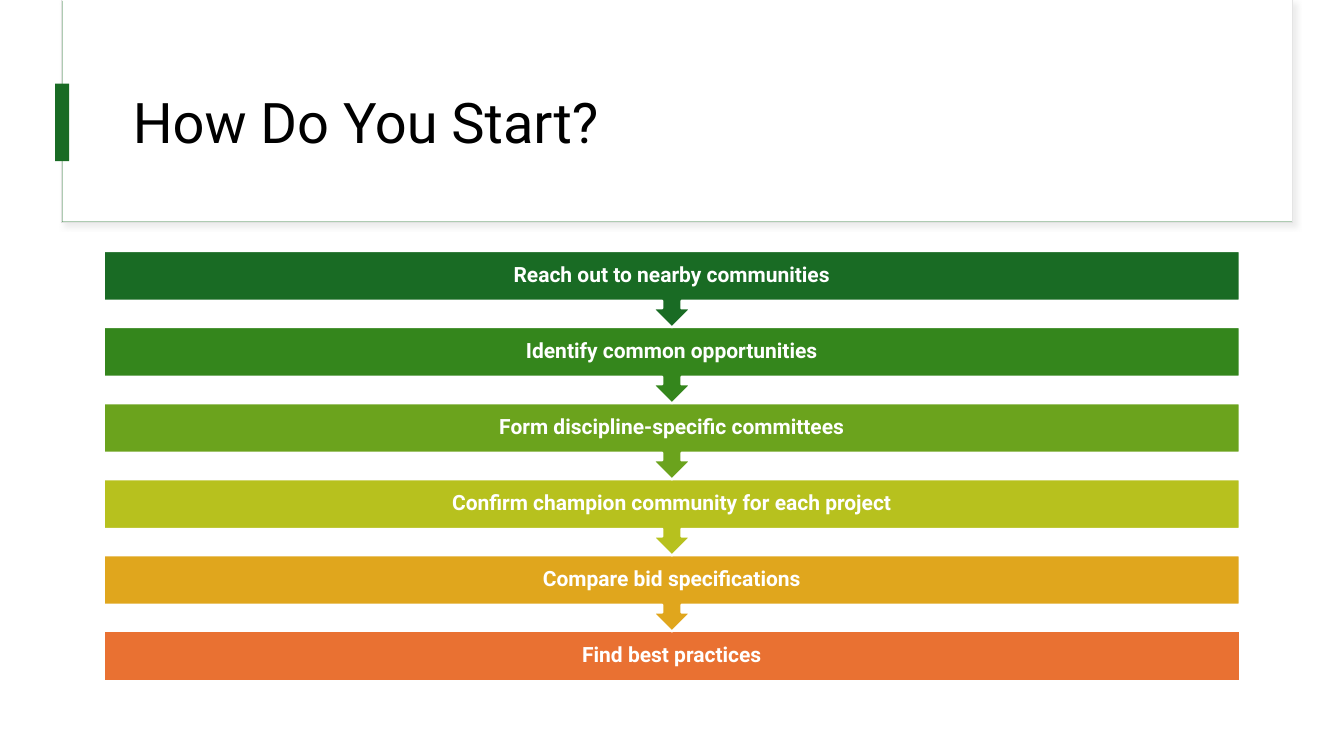
from dataclasses import dataclass

from lxml.etree import SubElement
from pptx import Presentation
from pptx.dml.color import RGBColor
from pptx.enum.shapes import MSO_SHAPE as Kind
from pptx.enum.text import MSO_ANCHOR as Anchor, PP_ALIGN as Align
from pptx.oxml.ns import qn
from pptx.shapes.autoshape import Shape
from pptx.shapes.shapetree import SlideShapes
from pptx.util import Pt

FONT = "Roboto"
GREEN = "196B24"
WHITE = "FFFFFF"
LEFT, TOP, WIDTH = 74.2, 179.4, 811.4
PITCH, TALL, BAR = 54.3, 54.5, 35.4


@dataclass
class Box:
    left: float
    top: float
    width: float
    height: float
    fill: str
    line: str = ""
    weight: float = 0
    kind: Kind = Kind.RECTANGLE


@dataclass
class Step:
    text: str
    fill: str


STEPS = [
    Step("Reach out to nearby communities", GREEN),
    Step("Identify common opportunities", "34861C"),
    Step("Form discipline-specific committees", "6BA31D"),
    Step("Confirm champion community for each project", "B7C11E"),
    Step("Compare bid specifications", "E0A61D"),
    Step("Find best practices", "E97132"),
]


def tint(code: str) -> RGBColor:
    return RGBColor.from_string(code)


def draw_box(shapes: SlideShapes, box: Box) -> Shape:
    shape = shapes.add_shape(
        box.kind, Pt(box.left), Pt(box.top), Pt(box.width), Pt(box.height)
    )
    shape.shadow.inherit = False
    shape.fill.solid()
    shape.fill.fore_color.rgb = tint(box.fill)
    if box.line:
        shape.line.color.rgb = tint(box.line)
        shape.line.width = Pt(box.weight)
    else:
        shape.line.fill.background()
    return shape


def cast_shade(shape: Shape) -> None:
    effects = shape._element.spPr.find(qn("a:effectLst"))
    shade = SubElement(
        effects, qn("a:outerShdw"), blurRad=str(Pt(4)), dist=str(Pt(3)),
        dir="2700000", algn="tl", rotWithShape="0",
    )
    color = SubElement(shade, qn("a:srgbClr"), val="D9D9D9")
    SubElement(color, qn("a:alpha"), val="50000")


def set_text(shape: Shape, text: str, size: float, color: str,
             bold: bool, align: Align) -> None:
    frame = shape.text_frame
    frame.word_wrap = True
    frame.vertical_anchor = Anchor.MIDDLE
    frame.text = text
    para = frame.paragraphs[0]
    para.alignment = align
    para.line_spacing = 0.9
    font = para.runs[0].font
    font.name = FONT
    font.size = Pt(size)
    font.bold = bold
    font.color.rgb = tint(color)


def draw_head(shapes: SlideShapes) -> None:
    back = draw_box(shapes, Box(43.9, 0, 879.1, 159.1, GREEN, "E1E1E1", 0.75))
    cast_shade(back)
    draw_box(shapes, Box(44.6, 0, 878.4, 158.4, WHITE))
    title = shapes.add_textbox(Pt(87.8), Pt(43.2), Pt(800.6), Pt(92.9))
    set_text(title, "How Do You Start?", 40, "000000", False, Align.LEFT)
    draw_box(shapes, Box(39.4, 59.8, 10, 55.4, GREEN))


def draw_step(shapes: SlideShapes, row: int, step: Step) -> None:
    last = row == len(STEPS) - 1
    kind = Kind.RECTANGLE if last else Kind.DOWN_ARROW_CALLOUT
    height = BAR if last else TALL
    top = TOP + row * PITCH
    box = Box(LEFT, top, WIDTH, height, step.fill, WHITE, 1.5, kind)
    shape = draw_box(shapes, box)
    set_text(shape, step.text, 15, WHITE, True, Align.CENTER)


def main() -> None:
    deck = Presentation()
    deck.slide_width, deck.slide_height = Pt(960), Pt(540)
    shapes = deck.slides.add_slide(deck.slide_layouts[6]).shapes
    draw_head(shapes)
    for row, step in reversed(list(enumerate(STEPS))):
        draw_step(shapes, row, step)
    deck.save("out.pptx")


if __name__ == "__main__":
    main()
